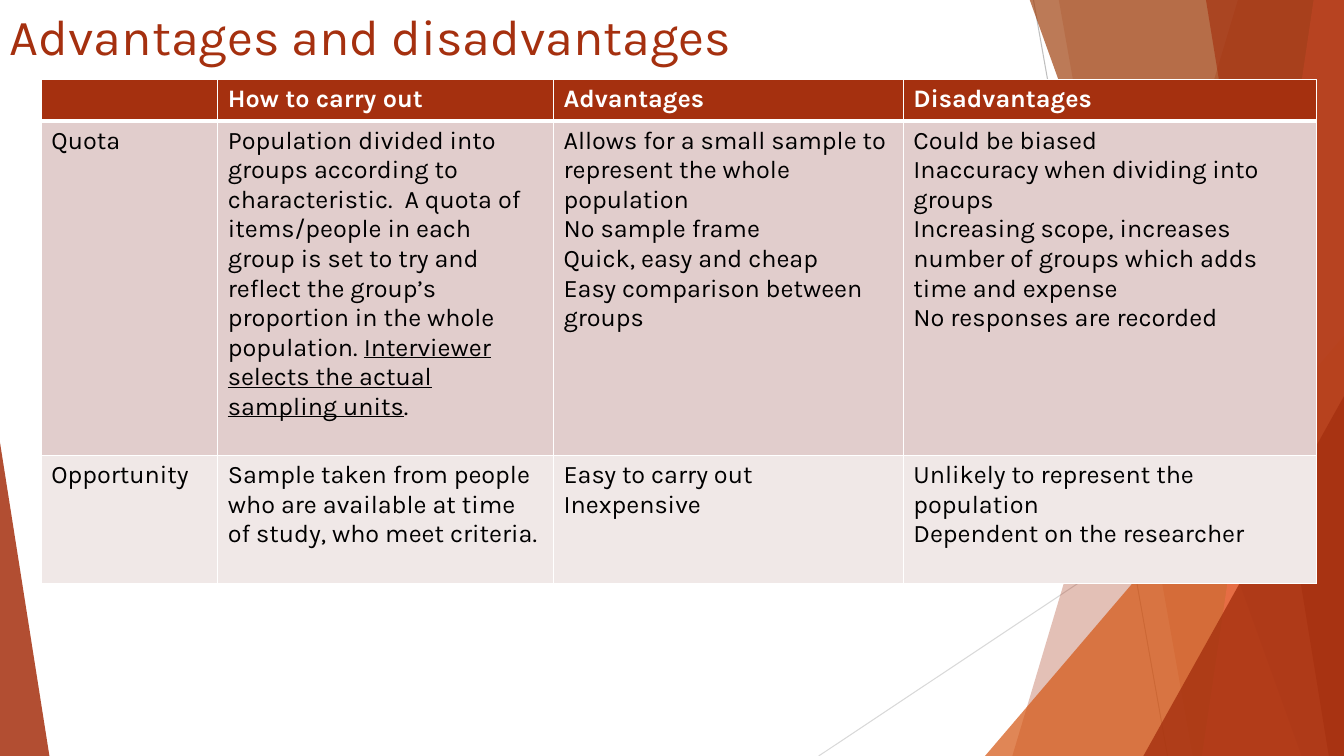
from lxml.etree import SubElement
from pptx import Presentation
from pptx.dml.color import RGBColor
from pptx.enum.shapes import MSO_CONNECTOR, MSO_SHAPE
from pptx.enum.text import MSO_ANCHOR
from pptx.oxml.ns import qn
from pptx.util import Inches, Pt

WHITE = RGBColor(0xFF, 0xFF, 0xFF)
BLACK = RGBColor(0x00, 0x00, 0x00)
RUST = RGBColor(0xA5, 0x30, 0x0F)
BROWN = RGBColor(0xA0, 0x42, 0x10)
ORANGE = RGBColor(0xD5, 0x58, 0x16)
CORAL = RGBColor(0xEE, 0x6E, 0x4A)
GREY = RGBColor(0xBF, 0xBF, 0xBF)
PALE_GREY = RGBColor(0xD9, 0xD9, 0xD9)
ROW_FILLS = [RUST, RGBColor(0xE1, 0xCD, 0xCC), RGBColor(0xF0, 0xE8, 0xE7)]

COLUMN_WIDTHS = [1.75, 3.33, 3.47, 4.1]
ROW_HEIGHTS = [0.41, 3.32, 1.27]

# Each cell is a list of paragraphs; underscores enclose underlined words.
CELLS = [
    [[], ["How to carry out"], ["Advantages"], ["Disadvantages"]],
    [
        ["Quota"],
        ["Population divided into groups according to characteristic.  A quota of "
         "items/people in each group is set to try and reflect the group’s proportion "
         "in the whole population. _Interviewer selects the actual sampling units_."],
        ["Allows for a small sample to represent the whole population",
         "No sample frame", "Quick, easy and cheap",
         "Easy comparison between groups"],
        ["Could be biased", "Inaccuracy when dividing into groups",
         "Increasing scope, increases number of groups which adds time and expense",
         "No responses are recorded"],
    ],
    [
        ["Opportunity"],
        ["Sample taken from people who are available at time of study, "
         "who meet criteria."],
        ["Easy to carry out", "Inexpensive"],
        ["Unlikely to represent the population", "Dependent on the researcher"],
    ],
]


class SlideBuilder:
    font_name = "Karla"
    top, bottom, right = -0.01, 7.5, 13.33

    def __init__(self, slide):
        self.slide = slide
        self.shapes = slide.shapes

    def style_font(self, font, size, color, bold=False):
        font.name = self.font_name
        font.size = Pt(size)
        font.bold = bold
        font.color.rgb = color

    def paint(self, shape, color, opacity):
        """Fill a shape with a see-through colour (opacity in percent), no outline."""
        shape.shadow.inherit = False
        shape.line.fill.background()
        shape.fill.solid()
        shape.fill.fore_color.rgb = color
        color_element = shape.fill._xPr.find(qn("a:solidFill"))[0]
        SubElement(color_element, qn("a:alpha"), val=str(opacity * 1000))

    def line(self, start, end, color):
        points = [Inches(value) for value in (*start, *end)]
        connector = self.shapes.add_connector(MSO_CONNECTOR.STRAIGHT, *points)
        connector.line.color.rgb = color
        connector.line.width = Pt(0.75)
        SubElement(connector._element.spPr, qn("a:effectLst"))

    def side_band(self, top_left, bottom_left, color, opacity):
        """Draw a full-height band from a slanted left side to the right slide edge."""
        corners = [(top_left, self.top), (self.right, self.top),
                   (self.right, self.bottom), (bottom_left, self.bottom)]
        points = [(Inches(x), Inches(y)) for x, y in corners]
        builder = self.shapes.build_freeform(*points[0], scale=1.0)
        builder.add_line_segments(points[1:], close=True)
        self.paint(builder.convert_to_shape(), color, opacity)

    def triangle(self, left, top, width, apex, color, opacity):
        """Draw a triangle standing on the bottom slide edge."""
        shape = self.shapes.add_shape(
            MSO_SHAPE.ISOSCELES_TRIANGLE, Inches(left), Inches(top),
            Inches(width), Inches(self.bottom - top))
        shape.adjustments[0] = apex
        self.paint(shape, color, opacity)

    def title(self, text):
        box = self.shapes.add_textbox(0, 0, Inches(9.4), Inches(1.44))
        frame = box.text_frame
        frame.word_wrap = True
        frame.vertical_anchor = MSO_ANCHOR.TOP
        frame.text = text
        self.style_font(frame.paragraphs[0].font, 36, RUST)

    def cell_borders(self, cell, row_index):
        properties = cell._tc.get_or_add_tcPr()
        widths = {"L": 1, "R": 1, "T": 3 if row_index == 1 else 1,
                  "B": 3 if row_index == 0 else 1}
        for side, width in widths.items():
            border = SubElement(properties, qn(f"a:ln{side}"), w=str(Pt(width)))
            fill = SubElement(border, qn("a:solidFill"))
            SubElement(fill, qn("a:srgbClr"), val=str(WHITE))

    def cell_text(self, cell, lines, is_header):
        frame = cell.text_frame
        for index, text in enumerate(lines):
            paragraph = frame.add_paragraph() if index else frame.paragraphs[0]
            for part_index, part in enumerate(text.split("_")):
                run = paragraph.add_run()
                run.text = part
                if part_index % 2:
                    run.font.underline = True
        for paragraph in frame.paragraphs:
            self.style_font(paragraph.font, 18, WHITE if is_header else BLACK, is_header)

    def table(self, left, top):
        table = self.shapes.add_table(
            len(ROW_HEIGHTS), len(COLUMN_WIDTHS), Inches(left), Inches(top),
            Inches(sum(COLUMN_WIDTHS)), Inches(sum(ROW_HEIGHTS))).table
        for column, width in zip(table.columns, COLUMN_WIDTHS):
            column.width = Inches(width)
        for row_index, row in enumerate(table.rows):
            row.height = Inches(ROW_HEIGHTS[row_index])
            for cell, lines in zip(row.cells, CELLS[row_index]):
                self.cell_borders(cell, row_index)
                cell.fill.solid()
                cell.fill.fore_color.rgb = ROW_FILLS[row_index]
                self.cell_text(cell, lines, is_header=row_index == 0)


def main():
    presentation = Presentation()
    presentation.slide_width = Inches(13.33)
    presentation.slide_height = Inches(7.5)
    slide = presentation.slides.add_slide(presentation.slide_layouts[6])
    builder = SlideBuilder(slide)

    builder.line((10.25, 0), (11.58, 7.5), GREY)
    builder.line((13.33, 4.03), (8.12, 7.5), PALE_GREY)
    builder.side_band(12.28, 10.04, RUST, 30)
    builder.side_band(10.5, 11.83, RUST, 20)
    builder.triangle(9.77, 3.33, 3.56, 1, ORANGE, 72)
    builder.side_band(10.21, 12.91, BROWN, 70)
    builder.side_band(13.03, 11.92, CORAL, 70)
    builder.side_band(11.96, 13.18, RUST, 65)
    builder.triangle(11.34, 3.93, 1.99, 1, RUST, 80)
    builder.triangle(0, 4.39, 0.49, 0, RUST, 85)
    builder.title("Advantages and disadvantages")
    builder.table(0.41, 0.79)

    presentation.save("out.pptx")


if __name__ == "__main__":
    main()
